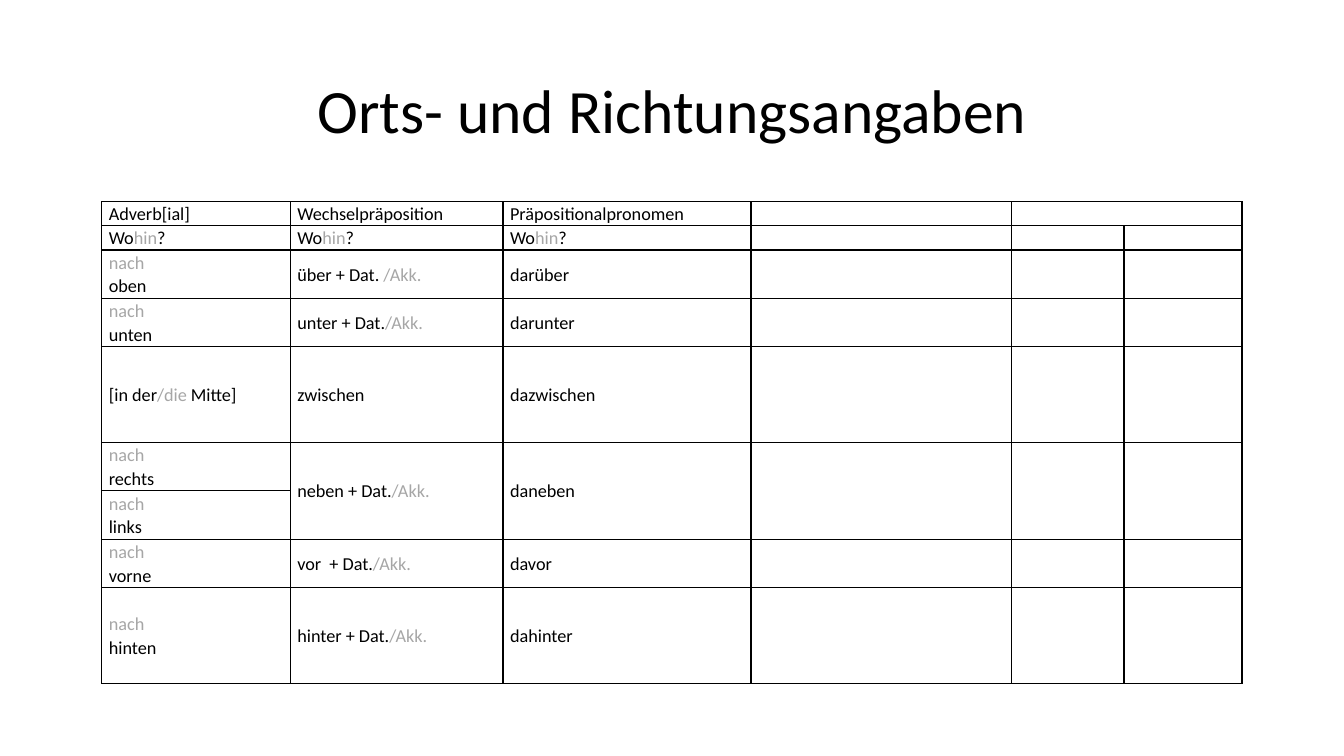
from lxml import etree
from pptx import Presentation
from pptx import util as u
from pptx.dml.color import RGBColor
from pptx.enum import text
from pptx.oxml import ns

BLACK, GREY = "000000", "A6A6A6"
FONT = "Calibri"
CELL_SIZE = 13
COLUMNS = [1.87, 2.11, 2.46, 2.58, 1.12, 1.17]
HEIGHTS = [0.24, 0.24, 0.48, 0.48, 0.95, 0.48, 0.48, 0.48, 0.95]
QUESTION = "Wo|hin|?"
# Text between bars is grey; a blank line separates paragraphs.
ROWS = [
    ["Adverb[ial]", "Wechselpräposition", "Präpositionalpronomen"],
    [QUESTION, QUESTION, QUESTION],
    ["|nach\n|oben", "über + Dat. |/Akk.", "darüber"],
    ["|nach\n|unten", "unter + Dat.|/Akk.", "darunter"],
    ["[in der|/die| Mitte]", "zwischen", "dazwischen"],
    ["|nach\n|rechts", "neben + Dat.|/Akk.", "daneben"],
    ["|nach\n|links"],
    ["|nach \n|vorne", "vor  + Dat.|/Akk.", "davor"],
    ["|nach|\n\nhinten", "hinter + Dat.|/Akk.", "dahinter"],
]
CELL_FORMAT = {
    "vertical_anchor": text.MSO_ANCHOR.MIDDLE,
    "margin_left": u.Inches(0.07),
    "margin_right": u.Inches(0.07),
    "margin_top": 0,
    "margin_bottom": 0,
}


def set_format(target, values):
    for name, value in values.items():
        setattr(target, name, value)


def color(hex_value):
    return RGBColor.from_string(hex_value)


def add_run(p, content, size, hex_value):
    r = p.add_run()
    r.text = content
    set_format(r.font, {"size": u.Pt(size), "name": FONT})
    r.font.color.rgb = color(hex_value)


def add_break(p, size):
    p.add_line_break()
    etree.SubElement(p._p[-1], ns.qn("a:rPr"), sz=str(size * 100))


def fill_paragraph(p, marked):
    p.line_spacing = 1.07
    for i, part in enumerate(marked.split("|")):
        if part:
            add_run(p, part.rstrip("\n"), CELL_SIZE, GREY if i % 2 else BLACK)
        if part.endswith("\n"):
            add_break(p, CELL_SIZE)
    if not marked:
        etree.SubElement(p._p, ns.qn("a:endParaRPr"), sz=str(CELL_SIZE * 100))


def add_borders(cell):
    tc_pr = cell._tc.get_or_add_tcPr()
    for side in "LRTB":
        ln = etree.SubElement(tc_pr, ns.qn(f"a:ln{side}"), w=str(u.Pt(1)))
        fill = etree.SubElement(ln, ns.qn("a:solidFill"))
        etree.SubElement(fill, ns.qn("a:srgbClr"), val=BLACK)


def format_cell(cell, content):
    set_format(cell, CELL_FORMAT)
    add_borders(cell)
    cell.fill.background()
    tf = cell.text_frame
    for i, marked in enumerate(content.split("\n\n")):
        p = tf.add_paragraph() if i else tf.paragraphs[0]
        fill_paragraph(p, marked)


def add_title(s, content):
    box = s.shapes.add_textbox(
        u.Inches(0.92), u.Inches(0.4), u.Inches(11.5), u.Inches(1.45))
    tf = box.text_frame
    set_format(tf, {"word_wrap": True, "vertical_anchor": text.MSO_ANCHOR.MIDDLE})
    p = tf.paragraphs[0]
    set_format(p, {"alignment": text.PP_ALIGN.CENTER, "line_spacing": 0.9})
    add_run(p, content, 44, BLACK)


def add_preposition_table(s):
    frame = s.shapes.add_table(
        len(HEIGHTS), len(COLUMNS), u.Inches(1.01), u.Inches(2),
        u.Inches(sum(COLUMNS)), u.Inches(sum(HEIGHTS)))
    table = frame.table
    set_format(table, {"first_row": False, "horz_banding": False})
    for column, width in zip(table.columns, COLUMNS):
        column.width = u.Inches(width)
    for row, height, contents in zip(table.rows, HEIGHTS, ROWS):
        row.height = u.Inches(height)
        for i, cell in enumerate(row.cells):
            format_cell(cell, contents[i] if i < len(contents) else "")
    table.cell(0, 4).merge(table.cell(0, 5))
    for i in range(1, len(COLUMNS)):
        table.cell(5, i).merge(table.cell(6, i))


def main():
    prs = Presentation()
    set_format(prs, {"slide_width": u.Inches(13.33), "slide_height": u.Inches(7.5)})
    s = prs.slides.add_slide(prs.slide_layouts[6])
    add_title(s, "Orts- und Richtungsangaben")
    add_preposition_table(s)
    prs.save("out.pptx")


if __name__ == "__main__":
    main()
